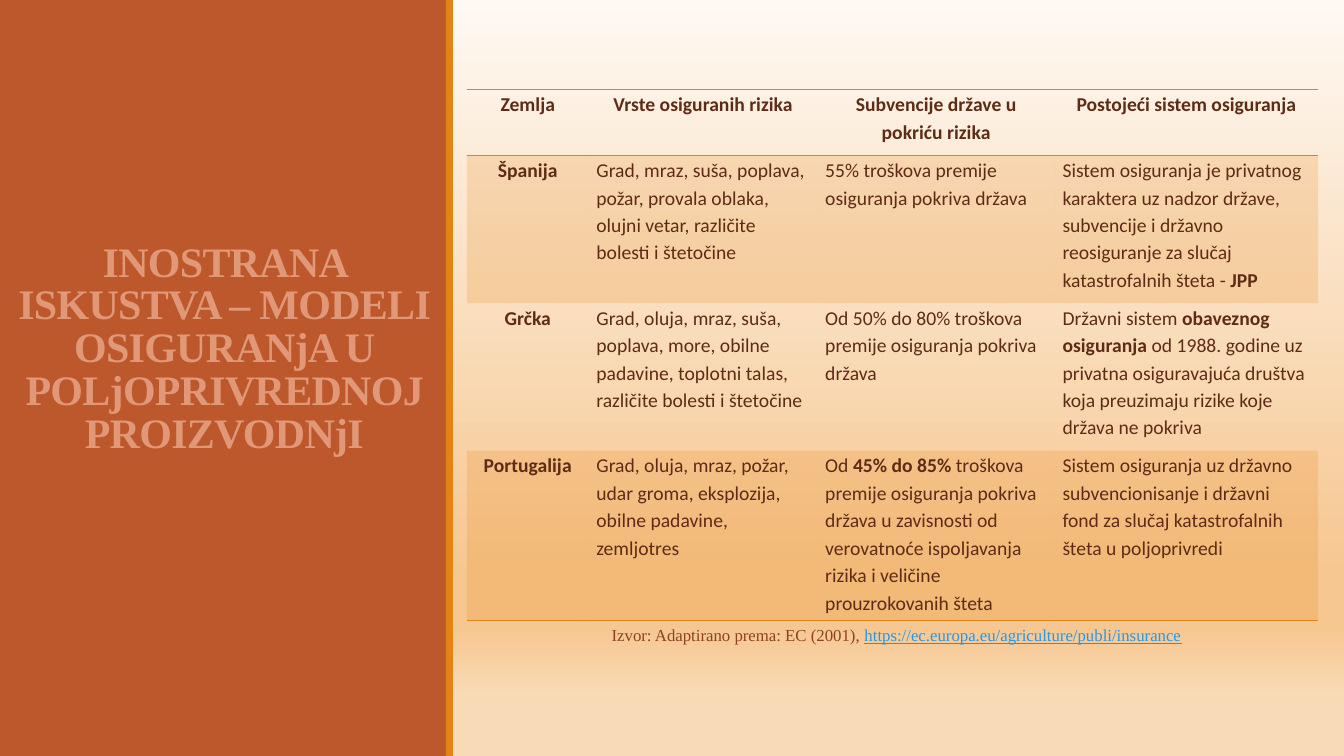
from lxml.etree import SubElement
from pptx import Presentation
from pptx.dml.color import RGBColor
from pptx.enum.shapes import MSO_SHAPE as Shape
from pptx.enum.text import MSO_ANCHOR as Anchor, MSO_AUTO_SIZE as AutoSize, PP_ALIGN as Align
from pptx.oxml import parse_xml
from pptx.oxml.ns import nsdecls, qn
from pptx.util import Pt

RUST = RGBColor(0xBD, 0x58, 0x2C)
ORANGE = RGBColor(0xE4, 0x83, 0x12)
PEACH = RGBColor(0xE0, 0x98, 0x78)
BROWN = RGBColor(0x5E, 0x2C, 0x16)
SOURCE_BROWN = RGBColor(0x8E, 0x42, 0x21)
LINK_BLUE = RGBColor(0x29, 0x98, 0xE3)
BACKDROP = [(0, "FEF9F3"), (76, "F6C791"), (83, "F6C791"), (92, "F9DAB6")]

TITLE = "INOSTRANA ISKUSTVA – MODELI OSIGURANjA U POLjOPRIVREDNOJ PROIZVODNjI"
SOURCE = "Izvor: Adaptirano prema: EC (2001), "
ADDRESS = "https://ec.europa.eu/agriculture/publi/insurance"

# Asterisks enclose bold words.
ROWS = [
    ("*Zemlja*", "*Vrste osiguranih rizika*",
     "*Subvencije države u pokriću rizika*", "*Postojeći sistem osiguranja*"),
    ("*Španija*",
     "Grad, mraz, suša, poplava, požar, provala oblaka, olujni vetar, "
     "različite bolesti i štetočine",
     "55% troškova premije osiguranja pokriva država",
     "Sistem osiguranja je privatnog karaktera uz nadzor države, subvencije i "
     "državno reosiguranje za slučaj katastrofalnih šteta - *JPP*"),
    ("*Grčka*",
     "Grad, oluja, mraz, suša, poplava, more, obilne padavine, toplotni talas, "
     "različite bolesti i štetočine",
     "Od 50% do 80% troškova premije osiguranja pokriva država",
     "Državni sistem *obaveznog osiguranja* od 1988. godine uz privatna "
     "osiguravajuća društva koja preuzimaju rizike koje država ne pokriva"),
    ("*Portugalija*",
     "Grad, oluja, mraz, požar, udar groma, eksplozija, obilne padavine, zemljotres",
     "Od *45% do 85%* troškova premije osiguranja pokriva država u zavisnosti od "
     "verovatnoće ispoljavanja rizika i veličine prouzrokovanih šteta",
     "Sistem osiguranja uz državno subvencionisanje i državni fond za slučaj "
     "katastrofalnih šteta u poljoprivredi"),
]
COLUMN_WIDTHS = [87, 163.5, 169.5, 188]
ROW_HEIGHTS = [47, 105.5, 105.5, 121]
TABLE_LEFT, TABLE_TOP = 333.5, 64
NO_TABLE_STYLE = "{2D5ABB26-0587-4C30-8999-92F81FD0307C}"


def place(shape, left, top, width, height):
    shape.left, shape.top = Pt(left), Pt(top)
    shape.width, shape.height = Pt(width), Pt(height)


def add_span(para, text, font, size, color, bold=False):
    span = para.add_run()
    span.text = text
    span.font.name, span.font.size, span.font.bold = font, Pt(size), bold
    span.font.color.rgb = color
    return span


def paint_background(page):
    fill = page.background.fill
    fill.gradient()
    fill.gradient_angle = 270
    stops = page.element.find(".//" + qn("a:gsLst"))
    for stop in list(stops):
        stops.remove(stop)
    for position, color in BACKDROP:
        stop = SubElement(stops, qn("a:gs"), pos=str(position * 1000))
        SubElement(stop, qn("a:srgbClr"), val=color)


def add_side_panel(page, title):
    """Put the coloured panel and its edge strip behind the title."""
    for left, width, color in [(0, 319, RUST), (318.5, 5, ORANGE)]:
        panel = page.shapes.add_shape(Shape.RECTANGLE, Pt(left), 0, Pt(width), Pt(540))
        panel.shadow.inherit = False
        panel.fill.solid()
        panel.fill.fore_color.rgb = color
        panel.line.fill.background()
        title.element.addprevious(panel.element)


def fill_title(title):
    place(title, 0, -45, 320.5, 407.5)
    frame = title.text_frame
    frame.word_wrap, frame.auto_size = True, AutoSize.NONE
    frame.vertical_anchor = Anchor.BOTTOM
    frame.margin_bottom = Pt(36)
    para = frame.paragraphs[0]
    para.alignment, para.line_spacing = Align.CENTER, 0.85
    span = add_span(para, TITLE, "Times New Roman", 30, PEACH, True)
    span.font._element.set("spc", "-50")


def fill_source(body):
    place(body, 221, 444, 839, 35)
    frame = body.text_frame
    frame.word_wrap, frame.auto_size = True, AutoSize.NONE
    para = frame.paragraphs[0]
    para.alignment, para.line_spacing = Align.CENTER, 0.9
    para.space_before, para.space_after = Pt(12), Pt(2)
    settings = para._p.get_or_add_pPr()
    settings.set("marL", "0")
    settings.set("indent", "0")
    SubElement(settings, qn("a:buNone"))
    add_span(para, SOURCE, "Times New Roman", 12, SOURCE_BROWN)
    add_span(para, ADDRESS, "Times New Roman", 12, LINK_BLUE).font.underline = True


def fill_cell(cell, text, centred, banded, edges):
    """Write the text and set the fill; edges names the ruled sides, T before B."""
    cell.margin_left = cell.margin_right = Pt(5.5)
    cell.margin_top = cell.margin_bottom = 0
    para = cell.text_frame.paragraphs[0]
    para.alignment = Align.CENTER if centred else Align.LEFT
    para.line_spacing = 1.15
    for number, part in enumerate(text.split("*")):
        if part:
            add_span(para, part, "Calibri", 14, BROWN, number % 2 == 1)
    settings = cell._tc.get_or_add_tcPr()
    if banded:
        cell.fill.solid()
        cell.fill.fore_color.rgb = ORANGE
        SubElement(settings.find(".//" + qn("a:srgbClr")), qn("a:alpha"), val="20000")
    else:
        cell.fill.background()
    for position, edge in enumerate(edges):
        settings.insert(position, parse_xml(
            f'<a:ln{edge} {nsdecls("a")} w="{Pt(1)}"><a:solidFill>'
            f'<a:srgbClr val="{ORANGE}"/></a:solidFill></a:ln{edge}>'))


def add_country_table(page):
    frame = page.shapes.add_table(
        len(ROWS), len(COLUMN_WIDTHS), Pt(TABLE_LEFT), Pt(TABLE_TOP),
        Pt(sum(COLUMN_WIDTHS)), Pt(sum(ROW_HEIGHTS)))
    table = frame.table
    table.first_row = table.horz_banding = False
    frame.element.find(".//" + qn("a:tableStyleId")).text = NO_TABLE_STYLE
    for column, width in zip(table.columns, COLUMN_WIDTHS):
        column.width = Pt(width)
    for row, height in zip(table.rows, ROW_HEIGHTS):
        row.height = Pt(height)
    rules = {0: "TB", len(ROWS) - 1: "B"}
    for r, texts in enumerate(ROWS):
        for c, text in enumerate(texts):
            fill_cell(table.cell(r, c), text, r == 0 or c == 0, r % 2 == 1,
                      rules.get(r, ""))


def main():
    deck = Presentation()
    deck.slide_width, deck.slide_height = Pt(960), Pt(540)
    page = deck.slides.add_slide(deck.slide_layouts[1])
    title, body = page.shapes.title, page.placeholders[1]
    paint_background(page)
    add_side_panel(page, title)
    fill_title(title)
    add_country_table(page)
    fill_source(body)
    deck.save("out.pptx")


if __name__ == "__main__":
    main()
